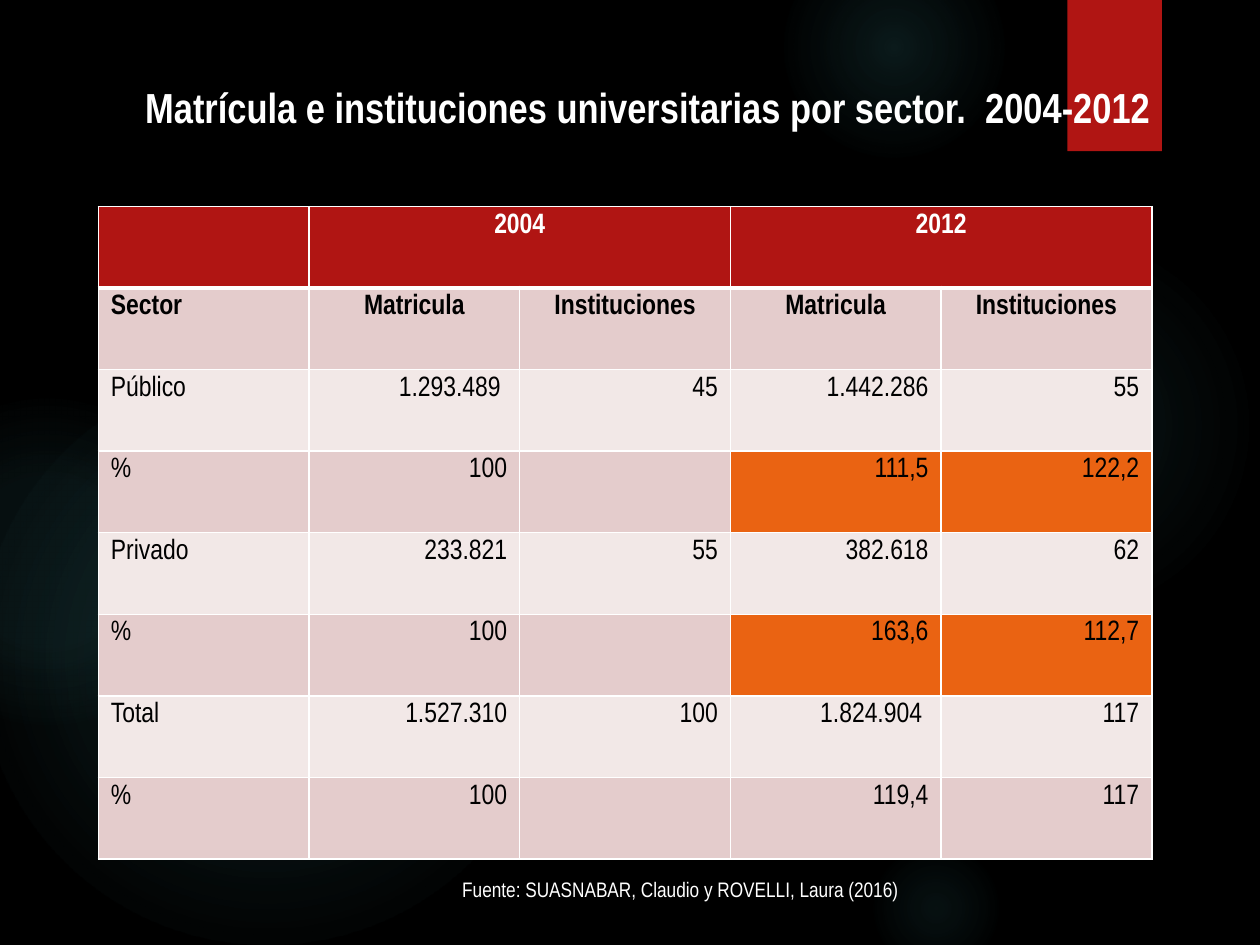
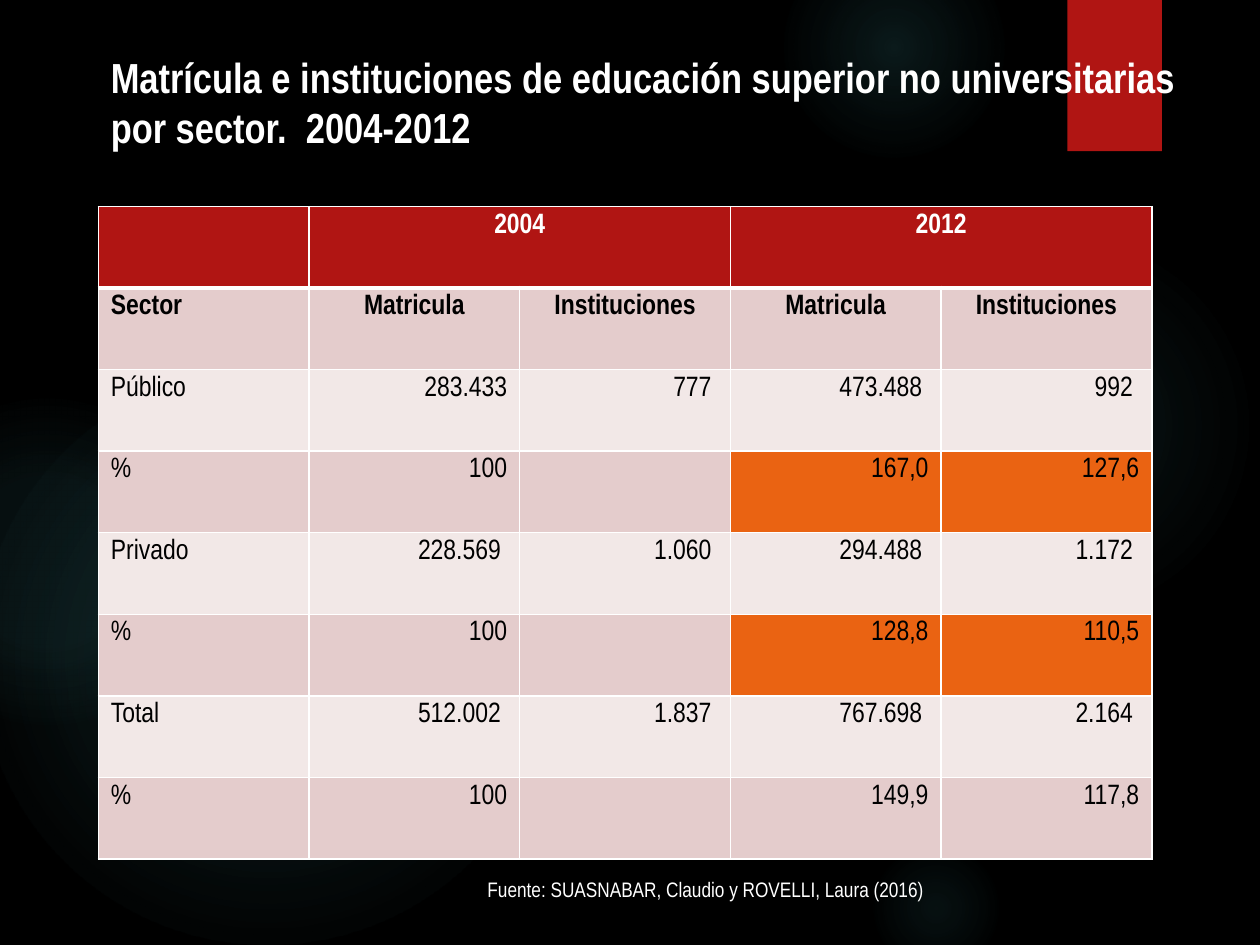
"""Build two slides comparing higher education enrolment by sector, 2004-2012."""
from dataclasses import dataclass

import lxml.etree
import pptx
import pptx.dml.color
import pptx.enum.shapes
import pptx.enum.text
import pptx.oxml
import pptx.oxml.ns
import pptx.util

Pt = pptx.util.Pt
Align = pptx.enum.text.PP_ALIGN
Preset = pptx.enum.shapes.MSO_SHAPE

SOURCE = "Fuente: SUASNABAR, Claudio y ROVELLI, Laura (2016) "
HEADINGS = [
    ("", "2004", "", "2012", ""),
    ("Sector", "Matricula", "Instituciones", "Matricula", "Instituciones"),
]
SLIDES = [
    {
        "title": "Matrícula e instituciones universitarias por sector.  2004-2012",
        "title_box": (56.2, 43.2, 627.8, 58.3),
        "title_align": Align.CENTER,
        "source_box": (76.3, 497.5, 627.8, 21.6),
        "rows": [
            ("Público", "1.293.489 ", "45", "1.442.286", "55"),
            ("%", "100", "", "111,5", "122,2"),
            ("Privado", "233.821", "55", "382.618", "62"),
            ("%", "100", "", "163,6", "112,7"),
            ("Total", "1.527.310", "100", "1.824.904 ", "117"),
            ("%", "100", "", "119,4", "117"),
        ],
    },
    {
        "title": "Matrícula e instituciones de educación superior no universitarias "
                 "por sector.  2004-2012",
        "title_box": (56.2, 25.9, 627.8, 74.9),
        "title_align": Align.LEFT,
        "source_box": (90, 497.5, 629.3, 21.6),
        "rows": [
            ("Público", "283.433", "777 ", "473.488 ", "992 "),
            ("%", "100", "", "167,0", "127,6"),
            ("Privado", "228.569 ", "1.060 ", "294.488 ", "1.172 "),
            ("%", "100", "", "128,8", "110,5"),
            ("Total", "512.002 ", "1.837 ", "767.698 ", "2.164 "),
            ("%", "100", "", "149,9", "117,8"),
        ],
    },
]
GLOWS = [
    (496, 132, 222, ((0, 7), (36, 6), (69, 0))),
    (448, -36, 126, ((0, 14), (36, 7), (73, 0))),
    (496, 480, 78, ((0, 9), (36, 5), (66, 0))),
    (-12, 210, 330, ((0, 11), (36, 10), (75, 0))),
    (-66, 228, 186, ((0, 8), (36, 8), (72, 0))),
]
RIBBON = (610, 0, 54, 86.4)
TABLE = (56.2, 118, 602, 373)
GROWTH_CELLS = {(row, column) for row in (3, 5) for column in (3, 4)}


@dataclass(frozen=True)
class Theme:
    font: str = "Arial Narrow"
    background: str = "000000"
    light: str = "FFFFFF"
    dark: str = "000000"
    glow: str = "50B9C1"
    red: str = "B01513"
    orange: str = "EA6312"
    bands: tuple = ("F2E8E7", "E4CCCC")
    title_size: float = 24
    table_size: float = 16
    source_size: float = 12
    border: float = 1
    header_border: float = 3


THEME = Theme()


def rgb(color):
    return pptx.dml.color.RGBColor.from_string(color)


def element(xml):
    return pptx.oxml.parse_xml(xml.replace(">", f' {pptx.oxml.ns.nsdecls("a")}>', 1))


def style_text(frame, size, color, bold, align):
    for para in frame.paragraphs:
        para.alignment = align
        para.font.size = Pt(size)
        for span in para.runs:
            span.font.name = THEME.font
            span.font.size = Pt(size)
            span.font.bold = bold
            span.font.color.rgb = rgb(color)


def add_text(page, bounds, text, size, bold, align):
    box = page.shapes.add_textbox(*map(Pt, bounds))
    box.text_frame.word_wrap = True
    box.text_frame.text = text
    style_text(box.text_frame, size, THEME.light, bold, align)


def add_plain_shape(page, preset, bounds):
    shape = page.shapes.add_shape(preset, *map(Pt, bounds))
    shape.shadow.inherit = False
    shape.line.fill.background()
    return shape


def add_glow(page, left, top, diameter, stops):
    shape = add_plain_shape(page, Preset.OVAL, (left, top, diameter, diameter))
    shape.fill.background()
    stop_list = "".join(
        f'<a:gs pos="{position * 1000}"><a:srgbClr val="{THEME.glow}">'
        f'<a:alpha val="{opacity * 1000}"/></a:srgbClr></a:gs>'
        for position, opacity in stops
    )
    gradient = element(
        f'<a:gradFill rotWithShape="1"><a:gsLst>{stop_list}</a:gsLst><a:path path="circle">'
        '<a:fillToRect l="50000" t="50000" r="50000" b="50000"/></a:path></a:gradFill>'
    )
    properties = shape._element.spPr
    properties.replace(properties.find(pptx.oxml.ns.qn("a:noFill")), gradient)


def add_ribbon(page):
    ribbon = add_plain_shape(page, Preset.RECTANGLE, RIBBON)
    ribbon.fill.solid()
    ribbon.fill.fore_color.rgb = rgb(THEME.red)
    effects = ribbon._element.spPr.find(pptx.oxml.ns.qn("a:effectLst"))
    effects.append(element(
        f'<a:outerShdw blurRad="{Pt(3)}" dist="{Pt(2)}" dir="5400000" rotWithShape="0">'
        f'<a:srgbClr val="{THEME.dark}"><a:alpha val="45000"/></a:srgbClr></a:outerShdw>'
    ))


def style_cell(cell, row, column):
    header = row == 0
    thick_side = {0: "B", 1: "T"}.get(row)
    for side in "LRTB":
        width = THEME.header_border if side == thick_side else THEME.border
        cell._tc.get_or_add_tcPr().append(element(
            f'<a:ln{side} w="{Pt(width)}"><a:solidFill><a:srgbClr val="{THEME.light}"/>'
            f'</a:solidFill></a:ln{side}>'
        ))
    if header:
        fill = THEME.red
    elif (row, column) in GROWTH_CELLS:
        fill = THEME.orange
    else:
        fill = THEME.bands[row % 2]
    cell.fill.solid()
    cell.fill.fore_color.rgb = rgb(fill)
    if column == 0:
        align = Align.LEFT
    else:
        align = Align.CENTER if row < len(HEADINGS) else Align.RIGHT
    color = THEME.light if header else THEME.dark
    style_text(cell.text_frame, THEME.table_size, color, row < len(HEADINGS), align)


def add_sector_table(page, rows):
    width, height = TABLE[2:]
    column_count = len(rows[0])
    table = page.shapes.add_table(len(rows), column_count, *map(Pt, TABLE)).table
    table.first_row = False
    table.horz_banding = False
    for column in table.columns:
        column.width = Pt(width / column_count)
    for row in table.rows:
        row.height = Pt(height / len(rows))
    for row, values in enumerate(rows):
        for column, value in enumerate(values):
            cell = table.cell(row, column)
            cell.text_frame.text = value
            style_cell(cell, row, column)
    for column in (1, 3):
        table.cell(0, column).merge(table.cell(0, column + 1))


def add_page(deck, content):
    page = deck.slides.add_slide(deck.slide_layouts[6])
    page.background.fill.solid()
    page.background.fill.fore_color.rgb = rgb(THEME.background)
    for glow in GLOWS:
        add_glow(page, *glow)
    add_ribbon(page)
    add_text(page, content["title_box"], content["title"], THEME.title_size, True,
             content["title_align"])
    add_sector_table(page, HEADINGS + content["rows"])
    add_text(page, content["source_box"], SOURCE, THEME.source_size, False, Align.CENTER)


def main():
    deck = pptx.Presentation()
    deck.slide_width, deck.slide_height = Pt(720), Pt(540)
    for content in SLIDES:
        add_page(deck, content)
    deck.save("out.pptx")


if __name__ == "__main__":
    main()
